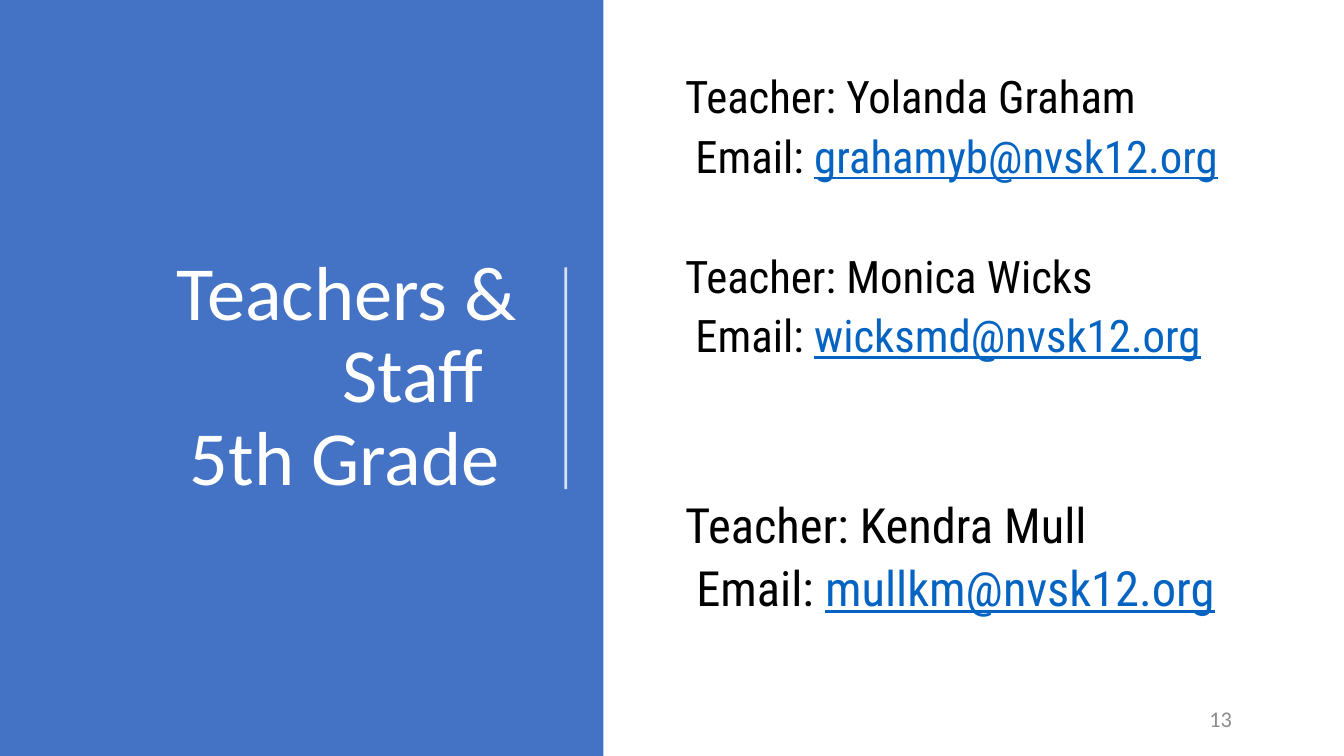
from lxml import etree
from pptx import Presentation
from pptx.dml.color import RGBColor
from pptx.enum.shapes import MSO_CONNECTOR, MSO_SHAPE
from pptx.enum.text import MSO_ANCHOR, PP_ALIGN
from pptx.oxml.ns import qn
from pptx.util import Inches, Pt

TOP, MIDDLE = MSO_ANCHOR.TOP, MSO_ANCHOR.MIDDLE
LEFT, RIGHT = PP_ALIGN.LEFT, PP_ALIGN.RIGHT
RECTANGLE, STRAIGHT = MSO_SHAPE.RECTANGLE, MSO_CONNECTOR.STRAIGHT

WIDTH = 10
HEIGHT = WIDTH * 9 / 16
BLUE, WHITE, BLACK, LINK, GREY = "4472C4", "FFFFFF", "000000", "0563C1", "8C8C8C"
HEADING_FONT, BODY_FONT = "Calibri", "Roboto Condensed"
LINE_SPACING, SPACE_AFTER = 0.9, 6
FONT_HEIGHT = 1.22  # line height of the body font, as a share of its size

FIRST_TEACHERS = [
    ("Yolanda Graham", "grahamyb@nvsk12.org"),
    ("Monica Wicks", "wicksmd@nvsk12.org"),
]
LAST_TEACHERS = [("Kendra Mull", "mullkm@nvsk12.org")]


def color(value):
    return RGBColor.from_string(value)


def add_text_frame(page, box, anchor=TOP):
    frame = page.shapes.add_textbox(*map(Inches, box)).text_frame
    frame.word_wrap = True
    frame.vertical_anchor = anchor
    return frame


def format_para(para, size, font, fill, align=LEFT, after=SPACE_AFTER):
    para.alignment = align
    para.line_spacing = LINE_SPACING
    para.space_after = Pt(after)
    for span in para.runs:
        span.font.size = Pt(size)
        span.font.name = font
        span.font.color.rgb = color(fill)


def add_divider(page, x, top, bottom):
    divider = page.shapes.add_connector(STRAIGHT, *map(Inches, (x, top, x, bottom)))
    divider.line.width = Pt(1.5)
    divider.line.color.rgb = color(WHITE)
    properties = divider.element.spPr
    tint = properties.find(".//" + qn("a:srgbClr"))
    etree.SubElement(tint, qn("a:alpha"), val="80000")
    etree.SubElement(properties, qn("a:effectLst"))


def add_title_panel(page, box, title):
    left, top, width, height = box
    panel = page.shapes.add_shape(RECTANGLE, *map(Inches, box))
    panel.shadow.inherit = False
    panel.fill.solid()
    panel.fill.fore_color.rgb = color(BLUE)
    panel.line.fill.background()
    add_divider(page, left + 4.21, top + 1.99, top + 3.64)

    margin = 0.53
    title_box = (left + margin, top + margin, width - 2 * margin - 0.01, height - 2 * margin)
    para = add_text_frame(page, title_box, MIDDLE).paragraphs[0]
    para.text = title
    format_para(para, 41, HEADING_FONT, WHITE, RIGHT, after=0)


def add_teachers(page, box, teachers, size):
    frame = add_text_frame(page, box)
    for index, (name, address) in enumerate(teachers):
        name_para = frame.add_paragraph() if index else frame.paragraphs[0]
        name_para.text = f"Teacher: {name}"
        if index:
            name_para.space_before = Pt(size * FONT_HEIGHT * LINE_SPACING + SPACE_AFTER)
        email_para = frame.add_paragraph()
        email_para.text = " Email: "
        link = email_para.add_run()
        link.text = address
        for para in (name_para, email_para):
            format_para(para, size, BODY_FONT, BLACK)
        link.font.color.rgb = color(LINK)
        link.font.underline = True


def add_page_number(page, box, number):
    para = add_text_frame(page, box, MIDDLE).paragraphs[0]
    para.text = str(number)
    format_para(para, 12, HEADING_FONT, GREY)


def main():
    deck = Presentation()
    deck.slide_width, deck.slide_height = Inches(WIDTH), Inches(HEIGHT)
    page = deck.slides.add_slide(deck.slide_layouts[6])
    column, column_width = WIDTH / 2, 4.47
    add_title_panel(page, (0, 0, 4.49, HEIGHT), "Teachers & Staff  \v5th Grade ")
    add_teachers(page, (column, 0.51, column_width, 3.1), FIRST_TEACHERS, 24)
    add_teachers(page, (column, 3.68, column_width, 1.39), LAST_TEACHERS, 26)
    add_page_number(page, (8.9, 5.21, 0.57, 0.3), 13)
    deck.save("out.pptx")


if __name__ == "__main__":
    main()
